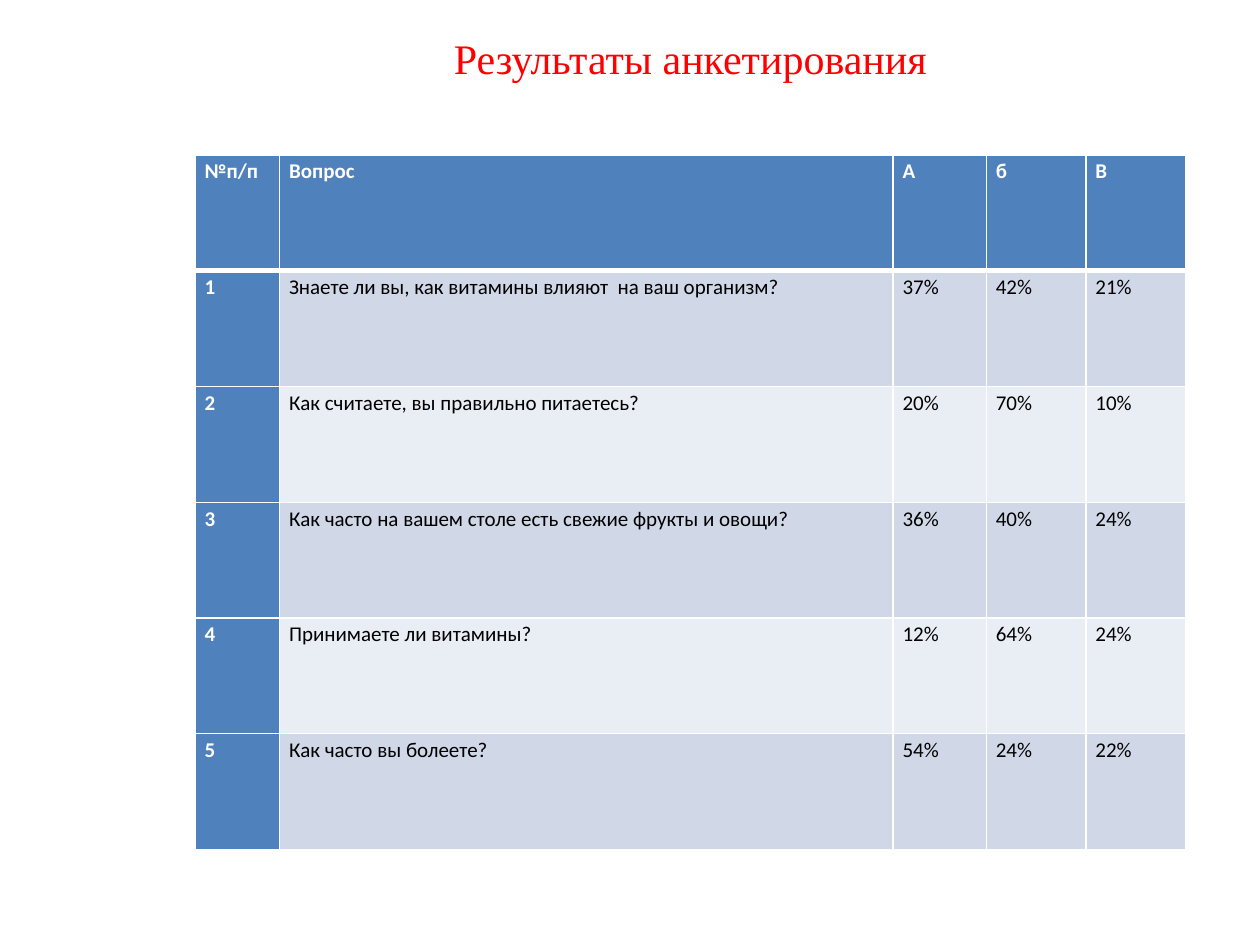
from lxml.etree import SubElement
from pptx import Presentation
from pptx.dml.color import RGBColor
from pptx.enum.text import MSO_ANCHOR as Anchor, PP_ALIGN as Align
from pptx.oxml.ns import qn
from pptx.util import Pt

TITLE = "Результаты анкетирования"
HEADER = ("№п/п", "Вопрос", "А", "б", "В")
ANSWERS = [
    ("Знаете ли вы, как витамины влияют  на ваш организм?", 37, 42, 21),
    ("Как считаете, вы правильно питаетесь?", 20, 70, 10),
    ("Как часто на вашем столе есть свежие фрукты и овощи?", 36, 40, 24),
    ("Принимаете ли витамины?", 12, 64, 24),
    ("Как часто вы болеете?", 54, 24, 22),
]

COLUMN_WIDTHS = (48.2, 350.6, 53.3, 56.9, 56.9)
ROW_HEIGHT = 66.15
TABLE_LEFT, TABLE_TOP = 111.6, 88.6
ACCENT, WHITE, BLACK, RED = "4F81BD", "FFFFFF", "000000", "FF0000"
BANDS = ("D0D8E8", "E9EDF4")


def color(code):
    return RGBColor.from_string(code)


def write(frame, text, font, size, ink, bold=False, align=Align.LEFT, spacing=1.0):
    para = frame.paragraphs[0]
    para.alignment = align
    para.line_spacing = spacing
    span = para.add_run()
    span.text = text
    span.font.name = font
    span.font.size = Pt(size)
    span.font.bold = bold
    span.font.color.rgb = color(ink)


def set_borders(cell, bottom):
    """Draw white cell borders, 1 pt wide except for the given bottom width."""
    properties = cell._tc.get_or_add_tcPr()
    for position, (side, width) in enumerate(
        (("lnL", 1), ("lnR", 1), ("lnT", 1), ("lnB", bottom))
    ):
        line = SubElement(properties, qn(f"a:{side}"), w=str(Pt(width)))
        fill = SubElement(line, qn("a:solidFill"))
        SubElement(fill, qn("a:srgbClr"), val=WHITE)
        properties.insert(position, line)


def add_title(page):
    title = page.shapes.title
    title.left, title.top, title.width, title.height = map(Pt, (93.6, 15.1, 601.9, 36))
    title.text_frame.word_wrap = True
    title.text_frame.vertical_anchor = Anchor.MIDDLE
    write(title.text_frame, TITLE, "Times New Roman", 24, RED, align=Align.CENTER)


def add_results(page):
    rows = [HEADER] + [
        (str(number), question, *(f"{share}%" for share in shares))
        for number, (question, *shares) in enumerate(ANSWERS, 1)
    ]
    table = page.shapes.add_table(
        len(rows), len(HEADER), Pt(TABLE_LEFT), Pt(TABLE_TOP),
        Pt(sum(COLUMN_WIDTHS)), Pt(ROW_HEIGHT * len(rows)),
    ).table
    table.first_col = True
    for column, width in zip(table.columns, COLUMN_WIDTHS):
        column.width = Pt(width)
    for r, row in enumerate(rows):
        table.rows[r].height = Pt(ROW_HEIGHT)
        for c, text in enumerate(row):
            cell = table.cell(r, c)
            heading = r == 0 or c == 0
            cell.margin_left = cell.margin_right = Pt(5.4)
            cell.margin_top = cell.margin_bottom = Pt(0)
            cell.fill.solid()
            cell.fill.fore_color.rgb = color(ACCENT if heading else BANDS[(r - 1) % 2])
            set_borders(cell, bottom=3 if r == 0 else 1)
            write(
                cell.text_frame, text, "Calibri", 12, WHITE if heading else BLACK,
                bold=heading, spacing=1.15,
                align=Align.LEFT if r == c == 0 else Align.JUSTIFY,
            )


def main():
    deck = Presentation()
    deck.slide_width, deck.slide_height = Pt(720), Pt(540)
    page = deck.slides.add_slide(deck.slide_layouts.get_by_name("Title Only"))
    add_title(page)
    add_results(page)
    deck.save("out.pptx")


if __name__ == "__main__":
    main()
